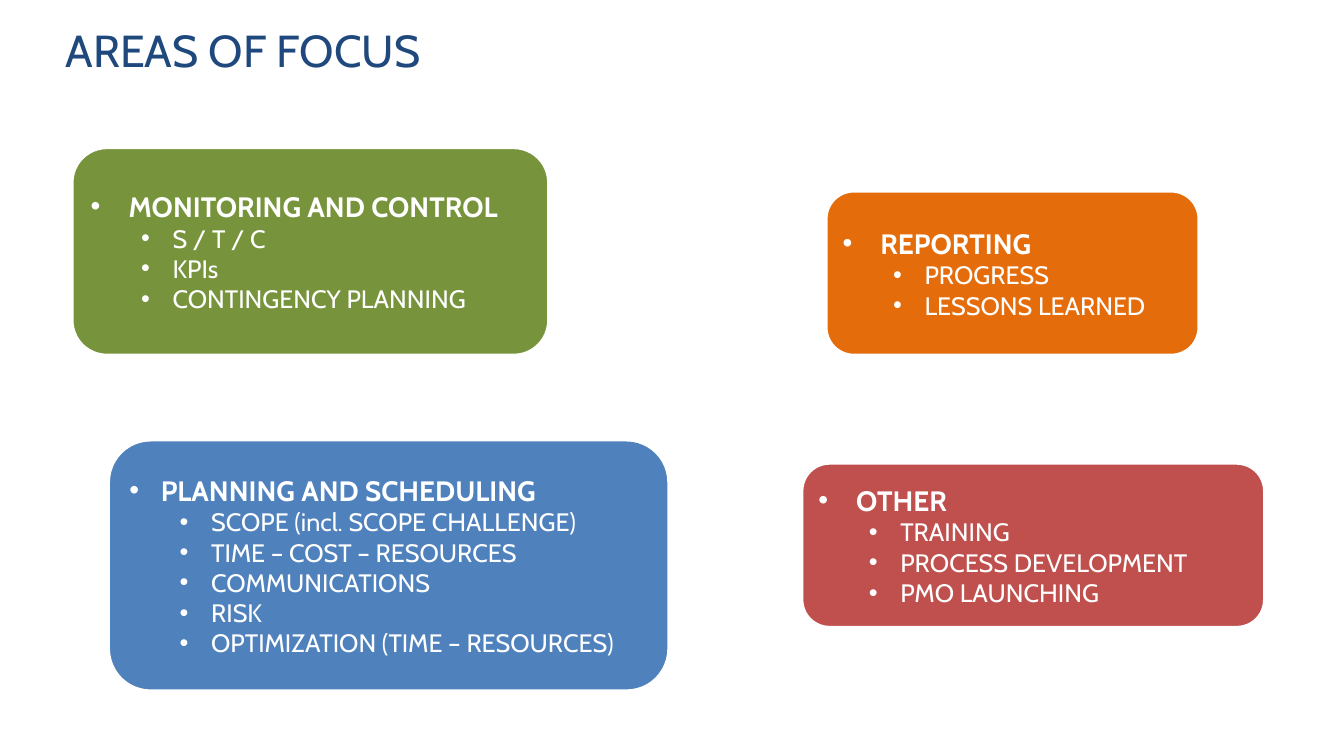
from lxml import etree
from pptx import Presentation
from pptx.dml import color
from pptx.enum import shapes, text
from pptx.oxml import ns
from pptx.util import Pt


def rgb(value):
    return color.RGBColor.from_string(value)


def format_paragraph(paragraph, size, hue, bold=False):
    paragraph.alignment = text.PP_ALIGN.LEFT
    for run in paragraph.runs:
        run.font.name = "Cabin"
        run.font.size = Pt(size)
        run.font.bold = bold
        run.font.color.rgb = rgb(hue)


deck = Presentation()
deck.slide_width, deck.slide_height = Pt(960), Pt(540)
slide = deck.slides.add_slide(deck.slide_layouts[5])

heading = slide.shapes.title
heading.left, heading.top, heading.width, heading.height = Pt(39.6), Pt(10.8), Pt(676.8), Pt(59.8)
heading.text_frame.text = "AREAS OF FOCUS"
heading.text_frame.vertical_anchor = text.MSO_ANCHOR.TOP
heading.text_frame.margin_top = Pt(5.4)
format_paragraph(heading.text_frame.paragraphs[0], 32, "1F497D")

areas = [
    ((77.8, 314.6, 399.6, 178.6), "4F81BD", 22.5, "PLANNING AND SCHEDULING",
     ["SCOPE (incl. SCOPE CHALLENGE)", "TIME – COST – RESOURCES", "COMMUNICATIONS",
      "RISK", "OPTIMIZATION (TIME – RESOURCES)"]),
    ((51.8, 105.8, 339.8, 147.6), "77933C", 27, "MONITORING AND CONTROL",
     ["S / T / C", "KPIs", "CONTINGENCY PLANNING"]),
    ((590.4, 136.8, 265.7, 116.6), "E46C0A", 27, "REPORTING",
     ["PROGRESS", "LESSONS LEARNED"]),
    ((573.1, 331.2, 329.8, 116.6), "C0504D", 27, "OTHER",
     ["TRAINING", "PROCESS DEVELOPMENT", "PMO LAUNCHING"]),
]

for bounds, hue, topic_indent, topic, details in areas:
    area = slide.shapes.add_shape(
        shapes.MSO_SHAPE.ROUNDED_RECTANGLE, *[Pt(length) for length in bounds])
    area.shadow.inherit = False
    area.fill.solid()
    area.fill.fore_color.rgb = rgb(hue)
    area.line.color.rgb = rgb("FFFFFF")
    area.line.width = Pt(1.5)

    frame = area.text_frame
    frame.word_wrap = True
    frame.vertical_anchor = text.MSO_ANCHOR.MIDDLE
    frame.margin_left = frame.margin_right = Pt(5.8)
    frame.margin_top = frame.margin_bottom = Pt(2.9)
    frame.text = "\n".join([topic] + details)

    for index, paragraph in enumerate(frame.paragraphs):
        is_topic = index == 0
        paragraph.level = 0 if is_topic else 1
        hanging = topic_indent if is_topic else 22.5
        properties = paragraph._p.get_or_add_pPr()
        properties.set("marL", str(Pt(topic_indent if is_topic else 58.5)))
        properties.set("indent", str(-Pt(hanging)))
        etree.SubElement(properties, ns.qn("a:buFont"), typeface="Arial")
        etree.SubElement(properties, ns.qn("a:buChar"), char="•")
        format_paragraph(paragraph, 20 if is_topic else 18, "FFFFFF", is_topic)

deck.save("out.pptx")
